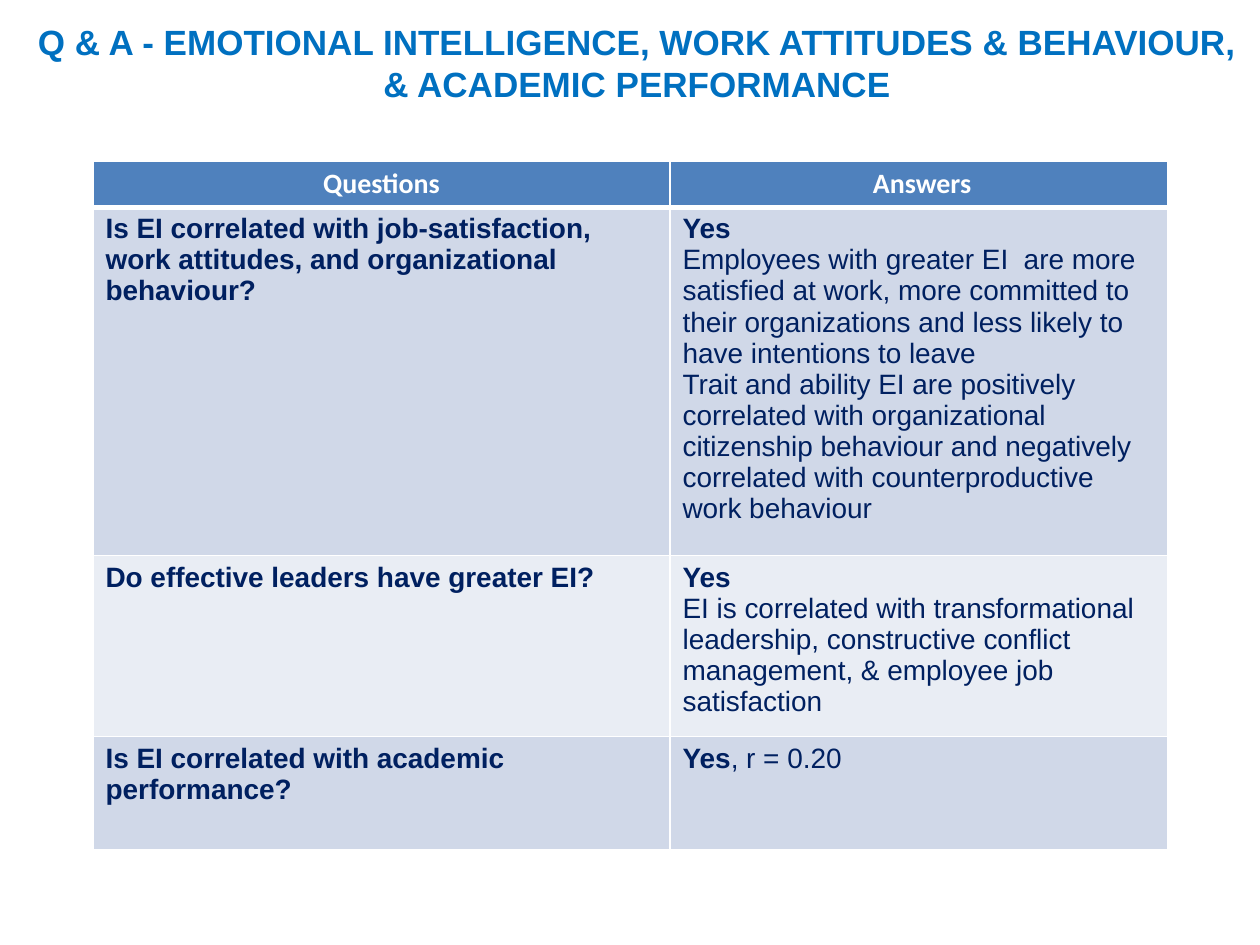
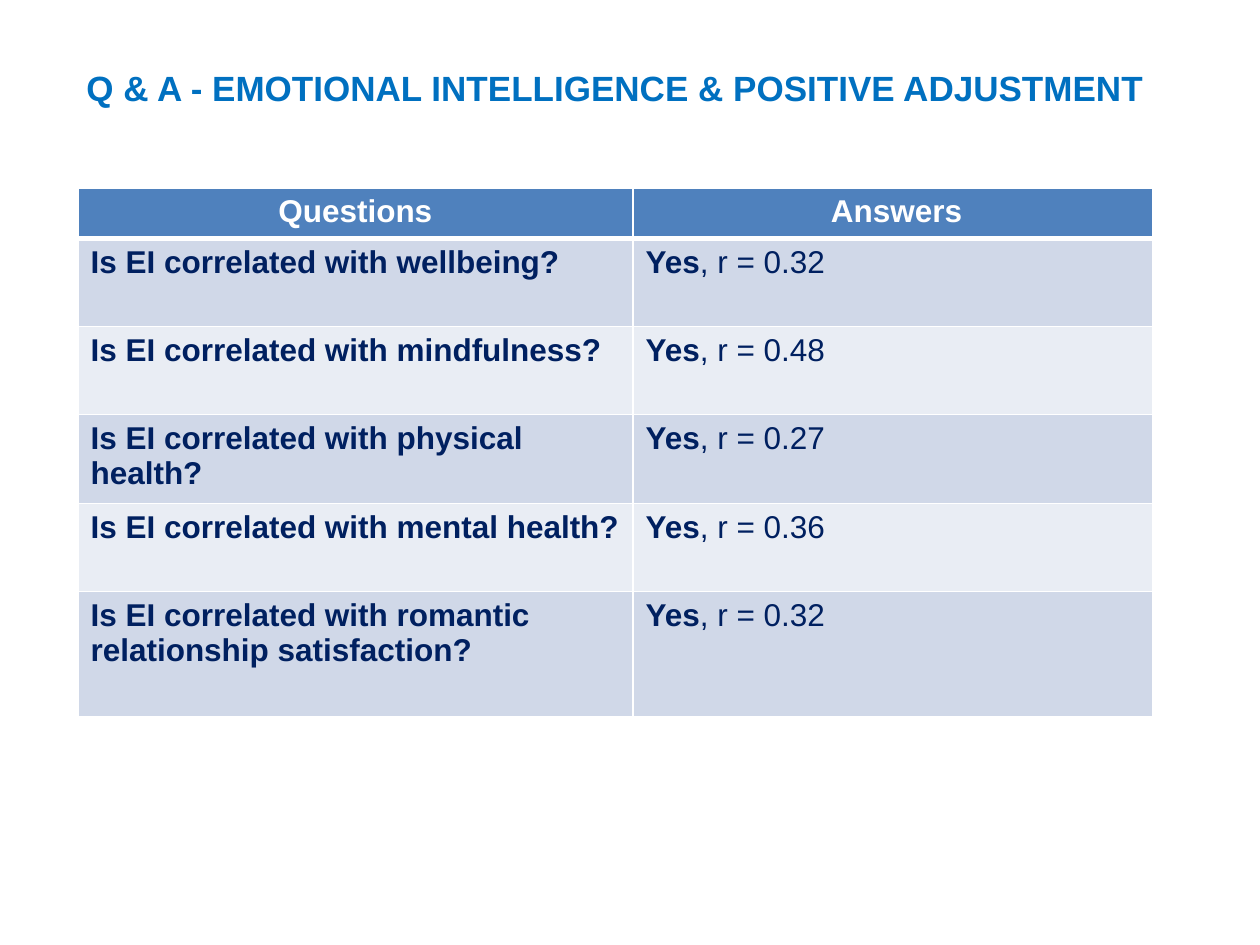
from lxml import etree
from pptx import Presentation
from pptx.dml.color import RGBColor
from pptx.enum.text import PP_ALIGN
from pptx.oxml.ns import qn
from pptx.util import Emu, Pt

CENTER, LEFT = PP_ALIGN.CENTER, PP_ALIGN.LEFT
PX = 914400 // 126
SLIDE_SIZE = 1260, 945

FONT = "Arial"
TITLE_BLUE, HEADER_BLUE, NAVY, WHITE = "0070C0", "4F81BD", "002060", "FFFFFF"
BANDS = "D0D8E8", "E9EDF4"
HEADERS = "Questions", " Answers"
VERDICT = "Yes"
TITLE_WIDTH = 1246

# Each answer: what follows the bold verdict on its line, then further paragraphs.
SLIDES = [
    {
        "title": "Q & A - EMOTIONAL INTELLIGENCE, WORK ATTITUDES & BEHAVIOUR, "
                 "& ACADEMIC PERFORMANCE",
        "title_box": (14, 14, TITLE_WIDTH, 97),
        "table_at": (93, 161),
        "columns": (577, 498),
        "rows": (46, 348, 181, 113),
        "header_font": "Calibri",
        "size": 16,
        "answers": [
            ("Is EI correlated with job-satisfaction, work attitudes, "
             "and organizational behaviour?",
             "",
             ["Employees with greater EI  are more satisfied at work, more committed "
              "to their organizations and less likely to have intentions to leave",
              "Trait and ability EI are positively correlated with organizational "
              "citizenship behaviour and negatively correlated with "
              "counterproductive work behaviour"]),
            ("Do effective leaders have greater EI?",
             "",
             ["EI is correlated with transformational leadership, constructive "
              "conflict management, & employee job satisfaction"]),
            ("Is EI correlated with academic performance?", ", r = 0.20", []),
        ],
    },
    {
        "title": "Q & A - EMOTIONAL INTELLIGENCE & POSITIVE ADJUSTMENT",
        "title_box": (-8, 60, TITLE_WIDTH, 55),
        "table_at": (78, 188),
        "columns": (555, 520),
        "rows": (50, 88, 88, 89, 88, 125),
        "header_font": FONT,
        "size": 18,
        "answers": [
            ("Is EI correlated with wellbeing?", ", r = 0.32", []),
            ("Is EI correlated with mindfulness?", ", r = 0.48", []),
            ("Is EI correlated with physical health?", ", r = 0.27", []),
            ("Is EI correlated with mental health?", ", r = 0.36", []),
            ("Is EI correlated with romantic relationship satisfaction?",
             ", r = 0.32", []),
        ],
    },
]


def px(*lengths):
    return [Emu(length * PX) for length in lengths]


def rgb(color):
    return RGBColor.from_string(color)


def write(paragraph, text, size, color, bold=True, font=FONT, align=LEFT):
    paragraph.text = text
    paragraph.alignment = align
    paragraph.font.name, paragraph.font.size = font, Pt(size)
    paragraph.font.bold, paragraph.font.color.rgb = bold, rgb(color)


def style_cell(cell, fill, bottom=1):
    """Fill the cell and rule it in white, with the bottom line's width in points."""
    cell.fill.solid()
    cell.fill.fore_color.rgb = rgb(fill)
    properties = cell._tc.get_or_add_tcPr()
    for place, (side, width) in enumerate(zip("LRTB", (1, 1, 1, bottom))):
        line = etree.Element(qn(f"a:ln{side}"), w=str(Pt(width)))
        solid = etree.SubElement(line, qn("a:solidFill"))
        etree.SubElement(solid, qn("a:srgbClr"), val=WHITE)
        properties.insert(place, line)


def add_title(slide, text, box):
    frame = slide.shapes.add_textbox(*px(*box)).text_frame
    frame.word_wrap = True
    write(frame.paragraphs[0], text, 20, TITLE_BLUE, align=CENTER)


def write_answer(frame, finding, details, size):
    verdict = frame.paragraphs[0]
    write(verdict, VERDICT, size, NAVY, bold=not finding)
    if finding:
        verdict.runs[0].font.bold = True
        verdict.add_run().text = finding
    for detail in details:
        write(frame.add_paragraph(), detail, size, NAVY, bold=False)


def add_answers(slide, content):
    columns, rows, size = content["columns"], content["rows"], content["size"]
    table = slide.shapes.add_table(
        len(rows), len(columns),
        *px(*content["table_at"], sum(columns), sum(rows))).table
    for column, width in zip(table.columns, px(*columns)):
        column.width = width
    for row, height in zip(table.rows, px(*rows)):
        row.height = height

    for cell, header in zip(table.rows[0].cells, HEADERS):
        style_cell(cell, HEADER_BLUE, bottom=3)
        write(cell.text_frame.paragraphs[0], header, size, WHITE,
              font=content["header_font"], align=CENTER)
    for number, (question, finding, details) in enumerate(content["answers"]):
        question_cell, answer_cell = table.rows[number + 1].cells
        for cell in (question_cell, answer_cell):
            style_cell(cell, BANDS[number % len(BANDS)])
        write(question_cell.text_frame.paragraphs[0], question, size, NAVY)
        write_answer(answer_cell.text_frame, finding, details, size)


def main():
    deck = Presentation()
    deck.slide_width, deck.slide_height = px(*SLIDE_SIZE)
    blank = deck.slide_layouts[6]
    for content in SLIDES:
        slide = deck.slides.add_slide(blank)
        add_title(slide, content["title"], content["title_box"])
        add_answers(slide, content)
    deck.save("out.pptx")


if __name__ == "__main__":
    main()
